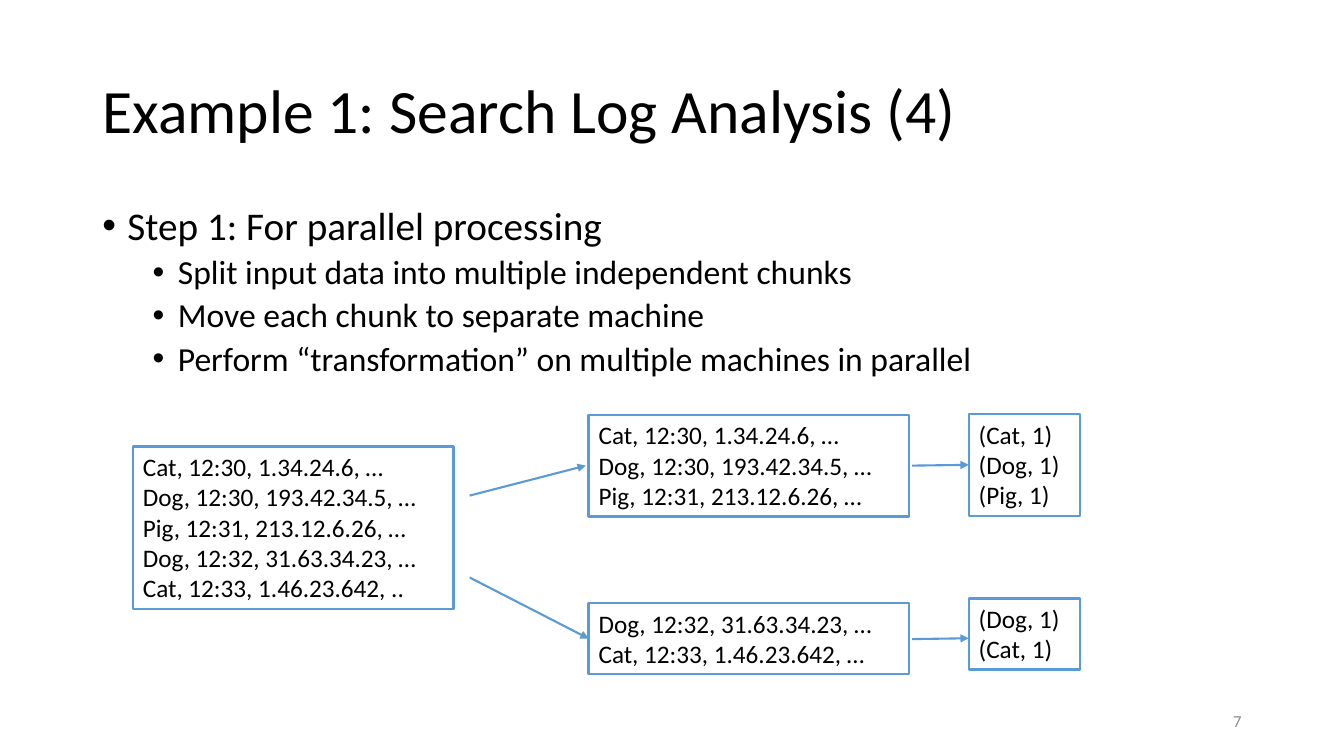
from lxml import etree
from pptx import Presentation
from pptx.dml.color import RGBColor
from pptx.enum.shapes import MSO_CONNECTOR, MSO_SHAPE
from pptx.enum.text import MSO_ANCHOR, MSO_AUTO_SIZE, PP_ALIGN
from pptx.oxml.ns import qn
from pptx.util import Pt

LEFT, RIGHT = PP_ALIGN.LEFT, PP_ALIGN.RIGHT
TOP, MIDDLE = MSO_ANCHOR.TOP, MSO_ANCHOR.MIDDLE
NO_AUTOFIT = MSO_AUTO_SIZE.NONE
RECTANGLE = MSO_SHAPE.RECTANGLE
STRAIGHT = MSO_CONNECTOR.STRAIGHT
LEFT_SIDE = 1

COLORS = {"text": "000000", "number": "8C8C8C", "line": "5B9BD5"}


def write_lines(shape, lines, size, color="text", align=LEFT, anchor=TOP):
    """Fill a shape with one paragraph per line and return the paragraphs."""
    frame = shape.text_frame
    frame.text = "\n".join(lines)
    for name, value in {"word_wrap": True, "auto_size": NO_AUTOFIT,
                        "vertical_anchor": anchor}.items():
        setattr(frame, name, value)
    for para in frame.paragraphs:
        para.alignment = align
        for span in para.runs:
            span.font.name = "Calibri"
            span.font.size = Pt(size)
            span.font.color.rgb = RGBColor.from_string(COLORS[color])
    return frame.paragraphs


def style_line(shape, width):
    shape.line.color.rgb = RGBColor.from_string(COLORS["line"])
    shape.line.width = Pt(width)


deck = Presentation()
deck.slide_width, deck.slide_height = Pt(960), Pt(540)
page = deck.slides.add_slide(deck.slide_layouts[5])

# Title
title = page.shapes.title
for name, value in {"left": 66, "top": 28.75, "width": 828, "height": 104.4}.items():
    setattr(title, name, Pt(value))
heading = write_lines(title, ["Example 1: Search Log Analysis (4)"], 44, anchor=MIDDLE)
heading[0].line_spacing = 0.9

# Bulleted steps: level, size, space before, left margin
STEP = (0, 28, 10, 18)
DETAIL = (1, 24, 5, 54)
outline = [
    (STEP, "Step 1: For parallel processing"),
    (DETAIL, "Split input data into multiple independent chunks"),
    (DETAIL, "Move each chunk to separate machine"),
    (DETAIL, "Perform “transformation” on multiple machines in parallel"),
]
body = page.shapes.add_textbox(Pt(66), Pt(143.75), Pt(828), Pt(342.6))
paras = write_lines(body, [text for _, text in outline], 24)
for para, ((level, size, space, margin), _) in zip(paras, outline):
    for name, value in {"level": level, "line_spacing": 0.9,
                        "space_before": Pt(space)}.items():
        setattr(para, name, value)
    para.runs[0].font.size = Pt(size)
    props = para._p.get_or_add_pPr()
    props.set("marL", str(Pt(margin)))
    props.set("indent", str(Pt(-18)))
    etree.SubElement(props, qn("a:buFont")).set("typeface", "Arial")
    etree.SubElement(props, qn("a:buChar")).set("char", "•")

# Slide number
number = page.shapes.add_textbox(Pt(678), Pt(500.5), Pt(216), Pt(28.75))
write_lines(number, ["7"], 12, "number", RIGHT, MIDDLE)

# Log boxes: left, top, width, height, lines
log = [
    "Cat, 12:30, 1.34.24.6, …",
    "Dog, 12:30, 193.42.34.5, …",
    "Pig, 12:31, 213.12.6.26, …",
    "Dog, 12:32, 31.63.34.23, …",
]
boxes = {
    "input": (95, 318.9, 229, 116.3, log + ["Cat, 12:33, 1.46.23.642, .."]),
    "chunk 1": (420.5, 296.3, 229, 72.7, log[:3]),
    "chunk 2": (420.5, 430.7, 229, 50.9, log[3:] + ["Cat, 12:33, 1.46.23.642, …"]),
    "pairs 1": (692, 295.7, 79.5, 72.7, ["(Cat, 1)", "(Dog, 1)", "(Pig, 1)"]),
    "pairs 2": (692, 427.5, 79.5, 50.9, ["(Dog, 1)", "(Cat, 1)"]),
}
drawn = {}
for name, (left, top, width, height, lines) in boxes.items():
    box = page.shapes.add_shape(RECTANGLE, Pt(left), Pt(top), Pt(width), Pt(height))
    box.shadow.inherit = False
    box.fill.background()
    style_line(box, 1.75)
    write_lines(box, lines, 18)
    drawn[name] = box

# Arrows: start, end, box whose left side is joined
for x1, y1, x2, y2, target in [
    (335.5, 354, 418.5, 332.6, None),
    (335.5, 412.5, 420.5, 456.2, "chunk 2"),
    (651.6, 332.6, 692, 332, "pairs 1"),
    (651.6, 456.5, 692, 455.9, None),
]:
    arrow = page.shapes.add_connector(STRAIGHT, Pt(x1), Pt(y1), Pt(x2), Pt(y2))
    if target:
        arrow.end_connect(drawn[target], LEFT_SIDE)
    style_line(arrow, 1.5)
    etree.SubElement(arrow.line._get_or_add_ln(), qn("a:tailEnd")).set("type", "triangle")
    etree.SubElement(arrow._element.spPr, qn("a:effectLst"))

deck.save("out.pptx")
